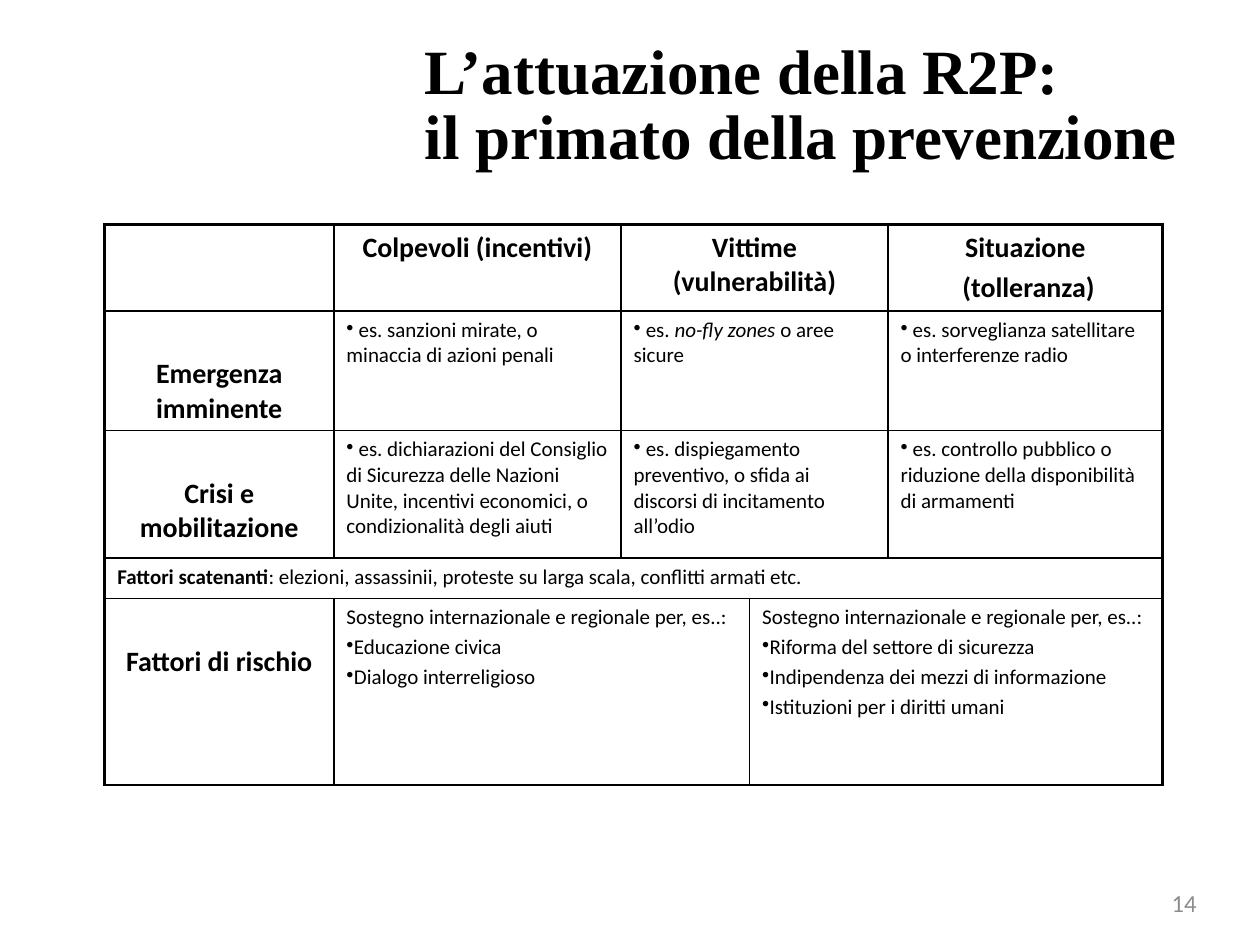
from lxml import etree
from pptx import Presentation
from pptx import util as u
from pptx.dml.color import RGBColor
from pptx.enum import text as t
from pptx.oxml import ns

BLACK = "000000"
PLAIN_GRID = "{2D5ABB26-0587-4C30-8999-92F81FD0307C}"
COLUMNS = [4.62, 5.79, 2.59, 2.79, 5.54]
ROWS = [1.75, 2.41, 2.57, 0.81, 3.76]
SUPPORT = "Sostegno internazionale e regionale per, es..:"

HEADERS = {
    1: ["Colpevoli (incentivi)"],
    2: ["Vittime (vulnerabilità)"],
    4: ["Situazione", " (tolleranza)"],
}
LABELS = {1: "Emergenza imminente", 2: "Crisi e mobilitazione", 4: "Fattori di rischio"}
TRIGGERS = [
    ("Fattori scatenanti", {"bold": True}),
    (": elezioni, assassinii, proteste su larga scala, conflitti armati etc.", {}),
]
EXAMPLES = {
    (1, 1): " es. sanzioni mirate, o minaccia di azioni penali",
    (1, 2): [(" es. ", {}), ("no-fly zones ", {"italic": True}), ("o aree sicure", {})],
    (1, 4): " es. sorveglianza satellitare o interferenze radio",
    (2, 1): " es. dichiarazioni del Consiglio di Sicurezza delle Nazioni Unite, "
            "incentivi economici, o condizionalità degli aiuti",
    (2, 2): " es. dispiegamento preventivo, o sfida ai discorsi di incitamento all’odio",
    (2, 4): " es. controllo pubblico o riduzione della disponibilità di armamenti",
}
MEASURES = {
    1: ["Educazione civica", "Dialogo interreligioso"],
    3: ["Riforma del settore di sicurezza", "Indipendenza dei mezzi di informazione",
        "Istituzioni per i diritti umani"],
}
SPANS = {(0, 2): 2, (1, 2): 2, (2, 2): 2, (3, 0): 5, (4, 1): 2, (4, 3): 2}


def color(value):
    return RGBColor.from_string(value)


def add_span(para, content, font="Calibri", size=12, fill=BLACK, bold=False, italic=False):
    span = para.add_run()
    span.text = content
    span.font.name = font
    span.font.size = u.Pt(size)
    span.font.color.rgb = color(fill)
    span.font.bold = bold
    span.font.italic = italic


def add_paragraph(frame, content, bullet=False, centered=False, **style):
    para = frame.paragraphs[0]
    if para.runs:
        para = frame.add_paragraph()
        para.space_before = u.Pt(0.2 * style.get("size", 12))
    if bullet:
        mark = etree.SubElement(para._p.get_or_add_pPr(), ns.qn("a:buChar"))
        mark.set("char", "•")
    para.alignment = t.PP_ALIGN.CENTER if centered else t.PP_ALIGN.LEFT
    pieces = [(content, {})] if isinstance(content, str) else content
    for words, changes in pieces:
        add_span(para, words, **{**style, **changes})
    return para


def add_box(slide, left, top, width, height):
    box = slide.shapes.add_textbox(u.Cm(left), u.Cm(top), u.Cm(width), u.Cm(height))
    box.text_frame.word_wrap = True
    return box.text_frame


def set_borders(cell, **widths):
    properties = cell._tc.get_or_add_tcPr()
    for index, (side, width) in enumerate(widths.items()):
        line = etree.Element(ns.qn(f"a:ln{side}"), w=str(u.Pt(width)))
        paint = etree.SubElement(line, ns.qn("a:solidFill"))
        etree.SubElement(paint, ns.qn("a:srgbClr"), val=BLACK)
        properties.insert(index, line)


def add_grid(slide):
    holder = slide.shapes.add_table(
        len(ROWS), len(COLUMNS), u.Cm(2.11), u.Cm(4.52),
        u.Cm(sum(COLUMNS)), u.Cm(sum(ROWS)))
    table = holder.table
    table.first_row = table.horz_banding = False
    table._tbl.tblPr.find(ns.qn("a:tableStyleId")).text = PLAIN_GRID
    for column, width in zip(table.columns, COLUMNS):
        column.width = u.Cm(width)
    for row, height in zip(table.rows, ROWS):
        row.height = u.Cm(height)
    for (row, column), count in SPANS.items():
        table.cell(row, column).merge(table.cell(row, column + count - 1))
    for row in range(len(ROWS)):
        for column in range(len(COLUMNS)):
            cell = table.cell(row, column)
            cell.fill.background()
            if not cell.is_spanned:
                end = column + SPANS.get((row, column), 1)
                set_borders(cell, L=1 if column else 2.25,
                            R=2.25 if end == len(COLUMNS) else 1,
                            T=1 if row else 2.25, B=1)
    return table


def fill_grid(table):
    heading = {"size": 16, "bold": True, "centered": True}
    for column, lines in HEADERS.items():
        for line in lines:
            add_paragraph(table.cell(0, column).text_frame, line, **heading)
    for row, label in LABELS.items():
        cell = table.cell(row, 0)
        cell.margin_top = u.Cm(0.93)
        add_paragraph(cell.text_frame, label, **heading)
    for place, example in EXAMPLES.items():
        add_paragraph(table.cell(*place).text_frame, example, bullet=True)
    add_paragraph(table.cell(3, 0).text_frame, TRIGGERS)
    for column, measures in MEASURES.items():
        frame = table.cell(4, column).text_frame
        add_paragraph(frame, SUPPORT)
        for measure in measures:
            add_paragraph(frame, measure, bullet=True)


def add_title(slide):
    frame = add_box(slide, 8.31, 0.74, 15.8, 3)
    style = {"font": "Times New Roman", "size": 36, "bold": True}
    para = add_paragraph(frame, "L’attuazione della R2P:", **style)
    para.line_spacing = u.Pt(37)
    para.add_line_break()
    add_span(para, "il primato della prevenzione", **style)


def add_page_number(slide):
    frame = add_box(slide, 23.37, 17.68, 1.6, 1.02)
    frame.vertical_anchor = t.MSO_ANCHOR.MIDDLE
    add_paragraph(frame, "14", size=14, fill="8C8C8C")


def main():
    deck = Presentation()
    deck.slide_width, deck.slide_height = u.Cm(25.4), u.Cm(19.05)
    page = deck.slides.add_slide(deck.slide_layouts[6])
    add_page_number(page)
    add_title(page)
    fill_grid(add_grid(page))
    deck.save("out.pptx")


if __name__ == "__main__":
    main()
